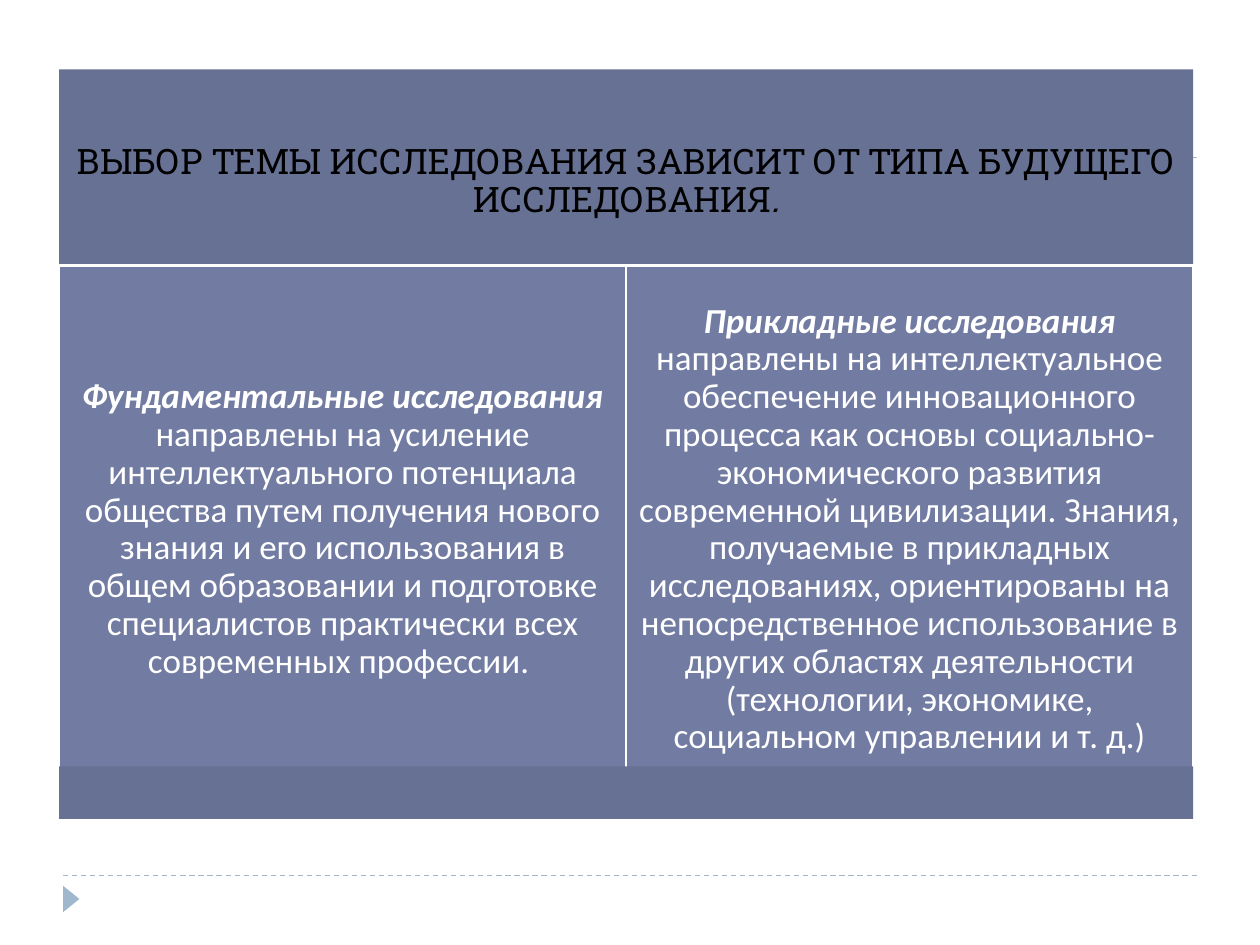
from lxml.etree import SubElement
from pptx import Presentation
from pptx.dml.color import RGBColor
from pptx.enum.dml import MSO_LINE
from pptx.enum.shapes import MSO_CONNECTOR, MSO_SHAPE
from pptx.enum.text import MSO_ANCHOR, MSO_AUTO_SIZE, PP_ALIGN
from pptx.oxml.ns import qn
from pptx.util import Inches, Pt

DARK, MID, PALE, WHITE, BLACK = "677194", "727CA3", "9FB8CD", "FFFFFF", "000000"

HEAD = [
    ("ВЫБОР ТЕМЫ ИССЛЕДОВАНИЯ ЗАВИСИТ ОТ ТИПА БУДУЩЕГО ИССЛЕДОВАНИЯ", False, False),
    (".", False, True),
]
CARDS = [
    [
        ("Фундаментальные исследования", True, True),
        (" направлены на усиление интеллектуального потенциала общества "
         "путем получения нового знания и его использования в общем "
         "образовании и подготовке специалистов практически всех "
         "современных профессии. ", False, False),
    ],
    [
        ("Прикладные исследования ", True, True),
        ("направлены на интеллектуальное обеспечение инновационного процесса "
         "как основы социально-экономического развития современной "
         "цивилизации. Знания, получаемые в прикладных исследованиях, "
         "ориентированы на непосредственное использование в других областях "
         "деятельности (технологии, экономике, социальном управлении "
         "и т. д.)", False, False),
    ],
]


def color(code):
    return RGBColor.from_string(code)


def paint(shape, code):
    shape.fill.solid()
    shape.fill.fore_color.rgb = color(code)
    shape.line.fill.background()


def block(slide, kind, box, code):
    shape = slide.shapes.add_shape(kind, *box)
    shape.shadow.inherit = False
    paint(shape, code)
    return shape


def write(shape, runs, font, code):
    frame = shape.text_frame
    frame.word_wrap = True
    frame.auto_size = MSO_AUTO_SIZE.NONE
    frame.vertical_anchor = MSO_ANCHOR.MIDDLE
    frame.margin_left = frame.margin_right = Inches(0.08)
    frame.margin_top = frame.margin_bottom = Inches(0.08)
    para = frame.paragraphs[0]
    para.alignment = PP_ALIGN.CENTER
    para.line_spacing = 0.9
    para.space_before, para.space_after = Pt(0), Pt(7)
    for text, bold, slant in runs:
        run = para.add_run()
        run.text = text
        run.font.name, run.font.size = font, Pt(20)
        run.font.bold, run.font.italic = bold, slant
        run.font.color.rgb = color(code)


def rule(slide, left, top, width):
    line = slide.shapes.add_connector(
        MSO_CONNECTOR.STRAIGHT, left, top, left + width, top)
    line.line.color.rgb = color(PALE)
    line.line.width = Pt(0.75)
    line.line.dash_style = MSO_LINE.DASH
    SubElement(line.element.spPr, qn("a:effectLst"))


def frame(slide, left, top, width, height):
    for share in (0.95, 0) :
        rule(slide, left, top + int(height * share), width)
    mark = block(slide, MSO_SHAPE.ISOSCELES_TRIANGLE,
                 (left - Inches(0.04), top + height - Inches(0.18),
                  Inches(0.21), Inches(0.13)), PALE)
    mark.rotation = 90


def header(slide, left, top, width, height):
    title = slide.shapes.title
    title.left, title.top, title.width, title.height = left, top, width, height
    title.element.getparent().append(title.element)
    paint(title, DARK)
    write(title, HEAD, "Roboto Slab", BLACK)


def cards(slide, left, top, width, height):
    step = width // len(CARDS)
    for col, runs in enumerate(CARDS):
        card = block(slide, MSO_SHAPE.RECTANGLE,
                     (left + col * step, top, step, height), MID)
        card.line.color.rgb = color(WHITE)
        card.line.width = Pt(1.5)
        write(card, runs, "Calibri", WHITE)


def panel(slide, left, top, width, height):
    header(slide, left, top, width, int(height * 0.3))
    cards(slide, left, top + int(height * 0.262), width, int(height * 0.704))
    block(slide, MSO_SHAPE.RECTANGLE,
          (left, top + int(height * 0.93), width, int(height * 0.07)), DARK)


def main():
    deck = Presentation()
    deck.slide_width, deck.slide_height = Inches(10), Inches(7.5)
    slide = deck.slides.add_slide(deck.slide_layouts[5])
    frame(slide, Inches(0.5), Inches(1.25), Inches(9), Inches(6))
    panel(slide, Inches(0.47), Inches(0.55), Inches(9), Inches(5.95))
    deck.save("out.pptx")


if __name__ == "__main__":
    main()
